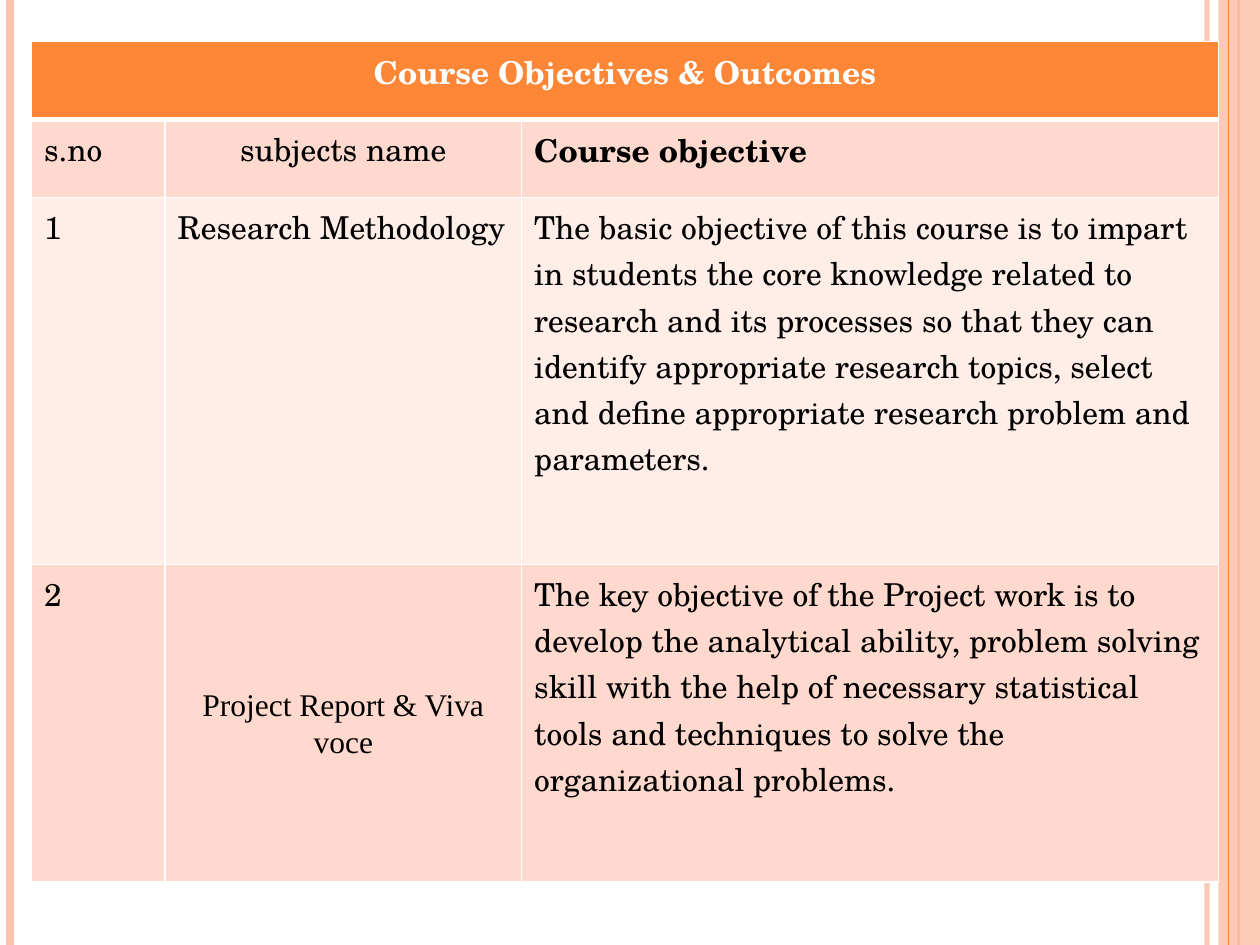
"""Build the course objectives slide: a table framed by vertical stripes."""
from lxml import etree
from pptx import Presentation
from pptx.dml.color import RGBColor
from pptx.enum import shapes, text
from pptx.oxml import ns
from pptx.util import Inches, Pt

COLORS = {"accent": "FE8637", "stripe": "FEC3AE", "band": "FFD9CE",
          "pale": "FFEDE8", "white": "FFFFFF", "black": "000000"}
FONT = "TeX Gyre Schola"
STRIPES = [(9.58, 3, "stripe", 93), (0.08, 4.5, "stripe", 100), (9.83, 1.5, "accent", 100)]
INNER_STRIPE = (9.75, 0.75, "accent", 100)
COLUMNS = [1.06, 2.83, 5.53]
ROWS = [
    (0.62, "accent", ["Course Objectives & Outcomes", "", ""]),
    (0.62, "band", ["s.no", "subjects name", "Course objective"]),
    (2.91, "pale", ["1", "Research Methodology",
                    "The basic objective of this course is to impart in students the core "
                    "knowledge related to research and its processes so that they can identify "
                    "appropriate research topics, select and define appropriate research "
                    "problem and parameters."]),
    (2.52, "band", ["2", "Project Report & Viva voce",
                    "The key objective of the Project work is to develop the analytical ability, "
                    "problem solving skill with the help of necessary statistical tools and "
                    "techniques to solve the organizational problems."]),
]
CENTERED = {(0, 0), (1, 1), (3, 1)}
BOLD = {(0, 0), (1, 2)}


def rgb(name):
    return RGBColor.from_string(COLORS[name])


def set_alpha(fill_parent, percent):
    color = next(fill_parent.iter(ns.qn("a:srgbClr")))
    etree.SubElement(color, ns.qn("a:alpha"), val=str(percent * 1000))


def add_stripe(slide, x, width, color, alpha):
    stripe = slide.shapes.add_connector(
        shapes.MSO_CONNECTOR.STRAIGHT, Inches(x), 0, Inches(x), Inches(7.5))
    stripe.line.width = Pt(width)
    stripe.line.color.rgb = rgb(color)
    properties = stripe._element.spPr
    if alpha < 100:
        set_alpha(properties, alpha)
    etree.SubElement(properties, ns.qn("a:effectLst"))


def set_borders(cell, widths):
    properties = cell._tc.get_or_add_tcPr()
    for position, (side, width) in enumerate(widths.items()):
        border = etree.Element(ns.qn(f"a:ln{side}"), w=str(Pt(width)))
        fill = etree.SubElement(border, ns.qn("a:solidFill"))
        etree.SubElement(fill, ns.qn("a:srgbClr"), val=COLORS["white"])
        properties.insert(position, border)


def fill_cell(cell, row, column, wording, color):
    cell.fill.solid()
    cell.fill.fore_color.rgb = rgb(color)
    set_borders(cell, {"L": 1, "R": 1, "T": 3 if row == 1 else 1, "B": 3 if row == 0 else 1})
    if not wording:
        return
    cell.text_frame.text = wording
    paragraph = cell.text_frame.paragraphs[0]
    if (row, column) in CENTERED:
        paragraph.alignment = text.PP_ALIGN.CENTER
    font = paragraph.runs[0].font
    font.name, font.size = FONT, Pt(18)
    font.bold = (row, column) in BOLD
    font.color.rgb = rgb("white" if row == 0 else "black")


def add_objectives(slide):
    table = slide.shapes.add_table(
        len(ROWS), len(COLUMNS), Inches(0.25), Inches(0.33),
        Inches(sum(COLUMNS)), Inches(sum(height for height, _, _ in ROWS))).table
    for column, width in enumerate(COLUMNS):
        table.columns[column].width = Inches(width)
    for row, (height, color, wordings) in enumerate(ROWS):
        table.rows[row].height = Inches(height)
        for column, wording in enumerate(wordings):
            fill_cell(table.cell(row, column), row, column, wording, color)
    table.cell(0, 0).merge(table.cell(0, len(COLUMNS) - 1))

    project = table.cell(3, 1)
    project.vertical_anchor = text.MSO_ANCHOR.MIDDLE
    project.margin_left = project.margin_right = Inches(0.07)
    project.margin_top = project.margin_bottom = 0
    project.text_frame.paragraphs[0].line_spacing = 1.07
    project.text_frame.paragraphs[0].runs[0].font.name = "Times New Roman"


def main():
    deck = Presentation()
    deck.slide_width, deck.slide_height = Inches(10), Inches(7.5)
    slide = deck.slides.add_slide(deck.slide_layouts[6])
    for stripe in STRIPES:
        add_stripe(slide, *stripe)
    band = slide.shapes.add_shape(
        shapes.MSO_SHAPE.RECTANGLE, Inches(9.67), 0, Inches(0.33), Inches(7.5))
    band.shadow.inherit = False
    band.fill.solid()
    band.fill.fore_color.rgb = rgb("stripe")
    set_alpha(band._element.spPr, 87)
    band.line.fill.background()
    add_stripe(slide, *INNER_STRIPE)
    add_objectives(slide)
    deck.save("out.pptx")


if __name__ == "__main__":
    main()
